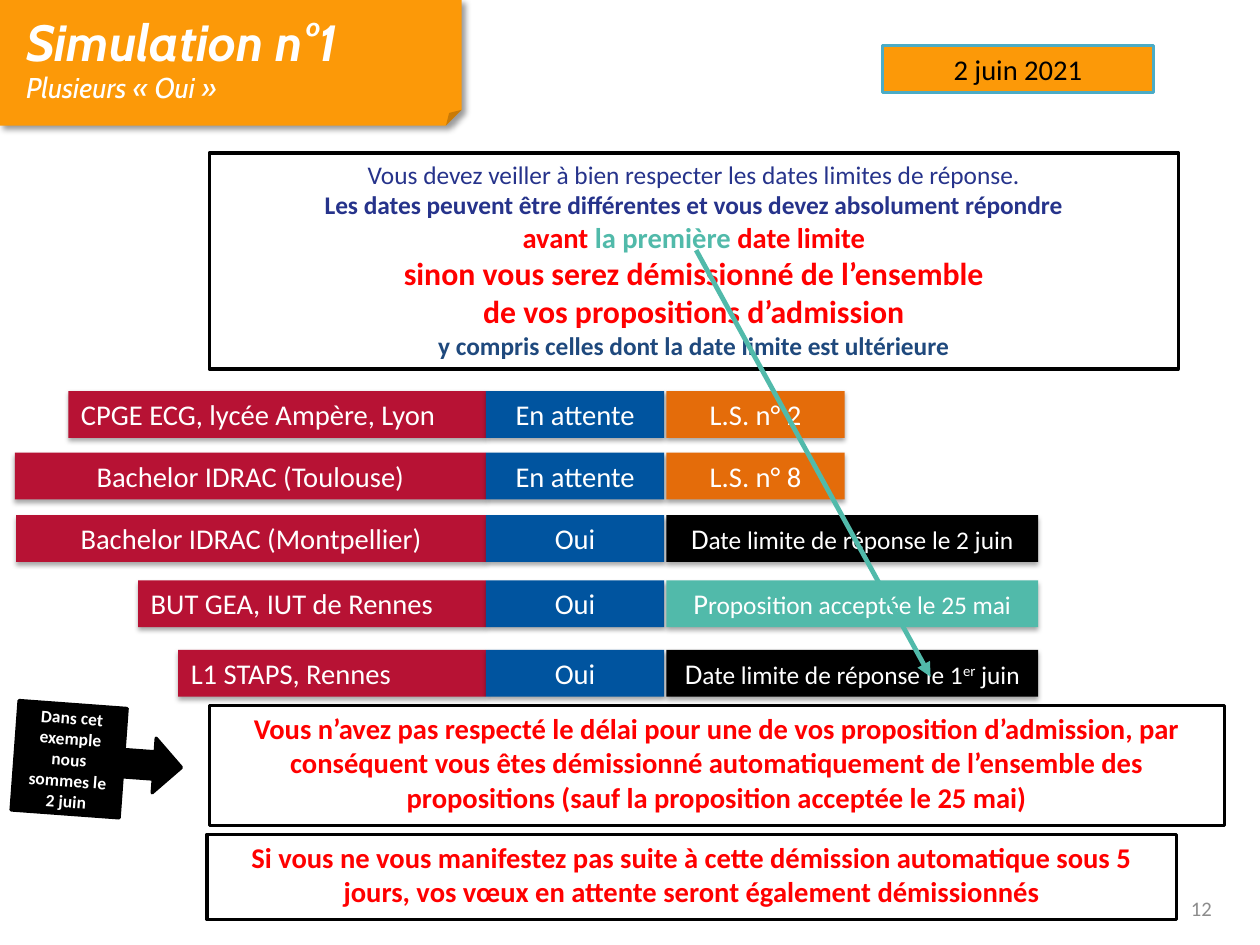
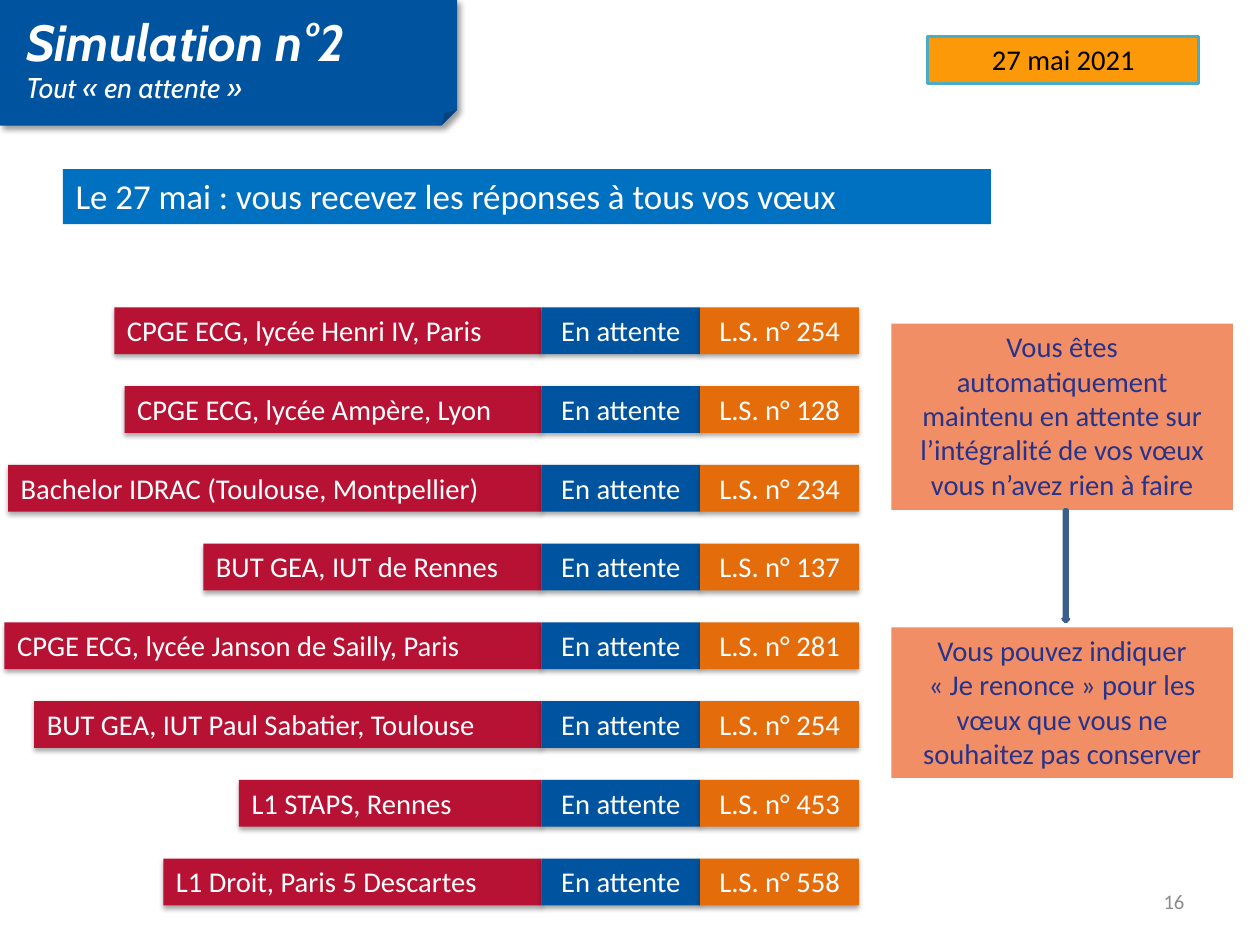
from dataclasses import dataclass

import lxml.etree
import pptx
import pptx.dml.color
import pptx.enum.shapes
import pptx.enum.text
import pptx.oxml.ns
import pptx.util

Cm = pptx.util.Cm
Pt = pptx.util.Pt
Shape = pptx.enum.shapes.MSO_SHAPE
Align = pptx.enum.text.PP_ALIGN
Anchor = pptx.enum.text.MSO_ANCHOR

# Shared colours and fonts
WHITE, BLACK, RED = "FFFFFF", "000000", "FF0000"
ORANGE, DARK_ORANGE, SALMON = "FC9908", "E46C0A", "F28E65"
BLUE, SKY_BLUE, INDIGO, NAVY = "00549F", "0070C0", "26338B", "1F497D"
CRIMSON, TEAL, GREY = "B71234", "51BAAA", "8C8C8C"
DATE_BORDER, ARROW_FILL, ARROW_BORDER = "4BACC6", "4F81BD", "3A5F8C"
BODY_FONT, TITLE_FONT = "Calibri", "Cabin"
ROW_HEIGHT = 1.04


@dataclass(frozen=True)
class Area:
    left: float
    top: float
    width: float
    height: float

    def lengths(self) -> tuple:
        return tuple(Cm(n) for n in (self.left, self.top, self.width, self.height))


@dataclass(frozen=True)
class Span:
    text: str
    size: float | None = None
    color: str | None = None
    superscript: bool = False


@dataclass(frozen=True)
class Line:
    spans: tuple[Span, ...]
    size: float = 18
    color: str = WHITE
    bold: bool = False
    italic: bool = False
    align: Align = Align.CENTER
    font: str = BODY_FONT
    spacing: float = 1.0


@dataclass(frozen=True)
class Shadow:
    opacity: int
    blur: float
    distance: float
    angle: int


@dataclass(frozen=True)
class Columns:
    status_left: float
    detail_left: float
    cell_width: float


@dataclass(frozen=True)
class Wish:
    left: float
    name: str
    status: str
    detail: Line
    detail_color: str = DARK_ORANGE
    detail_width: float | None = None
    align: Align = Align.LEFT


ROW_SHADOW = Shadow(35, 3.1, 1.8, 90)
BAND_SHADOW = Shadow(40, 4, 3, 45)


def line(text: str, **style) -> Line:
    return Line((Span(text),), **style)


def rgb(color: str) -> pptx.dml.color.RGBColor:
    return pptx.dml.color.RGBColor.from_string(color)


def add_xml(parent, tag: str, **attributes):
    element = lxml.etree.SubElement(parent, pptx.oxml.ns.qn(tag))
    for name, value in attributes.items():
        element.set(name, str(value))
    return element


def write_lines(frame, lines: tuple[Line, ...], anchor: Anchor,
                inset: tuple[float, float] = (0.28, 0.13)) -> None:
    frame.word_wrap = True
    frame.auto_size = pptx.enum.text.MSO_AUTO_SIZE.NONE
    frame.vertical_anchor = anchor
    frame.margin_left = frame.margin_right = Cm(inset[0])
    frame.margin_top = frame.margin_bottom = Cm(inset[1])
    for index, item in enumerate(lines):
        para = frame.add_paragraph() if index else frame.paragraphs[0]
        para.alignment = item.align
        para.line_spacing = item.spacing
        para.space_before = Pt(0)
        para.font.name = item.font
        para.font.size = Pt(item.size)
        para.font.bold = item.bold
        para.font.italic = item.italic
        para.font.color.rgb = rgb(item.color)
        for span in item.spans:
            run = para.add_run()
            run.text = span.text
            if span.size:
                run.font.size = Pt(span.size)
            if span.color:
                run.font.color.rgb = rgb(span.color)
            if span.superscript:
                run.font._element.set("baseline", "30000")


def add_box(page, area: Area, fill: str, lines: tuple[Line, ...] = (),
            border: str | None = None, shadow: Shadow | None = None,
            kind: Shape = Shape.RECTANGLE, anchor: Anchor = Anchor.TOP):
    box = page.shapes.add_shape(kind, *area.lengths())
    box.fill.solid()
    box.fill.fore_color.rgb = rgb(fill)
    if border:
        box.line.color.rgb = rgb(border)
        box.line.width = Pt(2)
    else:
        box.line.fill.background()
    box.shadow.inherit = False
    if shadow:
        effects = box._element.spPr.find(pptx.oxml.ns.qn("a:effectLst"))
        outer = add_xml(effects, "a:outerShdw", blurRad=int(Pt(shadow.blur)),
                        dist=int(Pt(shadow.distance)), dir=shadow.angle * 60000,
                        algn="tl", rotWithShape=0)
        color = add_xml(outer, "a:srgbClr", val=BLACK)
        add_xml(color, "a:alpha", val=shadow.opacity * 1000)
    if lines:
        write_lines(box.text_frame, lines, anchor)
    return box


def add_page(deck, title: str, subtitle: str, band_color: str, band_width: float,
             date: str, date_at: tuple[float, float],
             number: str, number_at: tuple[float, float]):
    """Title on a folded band, date box and page number."""
    page = deck.slides.add_slide(deck.slide_layouts[5])
    heading = page.shapes.title
    heading.left, heading.top, heading.width, heading.height = Area(0.58, 0.31, 9.5, 2.05).lengths()
    style = dict(font=TITLE_FONT, italic=True, align=Align.LEFT, spacing=0.95)
    write_lines(heading.text_frame,
                (line(title, size=32, bold=True, **style), line(subtitle, **style)),
                Anchor.MIDDLE, (0, 0))
    band = add_box(page, Area(0, 0, band_width, 2.79), band_color,
                   shadow=BAND_SHADOW, kind=Shape.FOLDED_CORNER)
    # The fold size has no entry in the adjustments of this shape
    fold = next(band._element.spPr.iter(pptx.oxml.ns.qn("a:avLst")))
    add_xml(fold, "a:gd", name="adj", fmla="val 12500")
    heading._element.addprevious(band._element)

    add_box(page, Area(*date_at, 6.02, ROW_HEIGHT), ORANGE,
            (line(date, color=BLACK),), border=DATE_BORDER)
    footer = page.shapes.add_textbox(*Area(*number_at, 6.53, 1.12).lengths())
    write_lines(footer.text_frame, (line(number, size=13, color=GREY, align=Align.RIGHT),),
                Anchor.MIDDLE)
    return page


def add_wish(page, top: float, wish: Wish, columns: Columns) -> None:
    """One row: wish, status and detail side by side."""
    cells = (
        (wish.left, columns.status_left - wish.left, CRIMSON, line(wish.name, align=wish.align)),
        (columns.status_left, columns.cell_width, BLUE, line(wish.status)),
        (columns.detail_left, wish.detail_width or columns.cell_width,
         wish.detail_color, wish.detail),
    )
    for left, width, fill, text in cells:
        add_box(page, Area(left, top, width, ROW_HEIGHT), fill, (text,), shadow=ROW_SHADOW)


def add_arrow(page, start: tuple[float, float], end: tuple[float, float]) -> None:
    arrow = page.shapes.add_connector(pptx.enum.shapes.MSO_CONNECTOR.STRAIGHT,
                                      *(Cm(n) for n in start + end))
    arrow.line.color.rgb = rgb(TEAL)
    arrow.line.width = Pt(3)
    add_xml(arrow.line._get_or_add_ln(), "a:tailEnd", type="triangle")
    add_xml(arrow._element.spPr, "a:effectLst")


def build_several_yes(deck) -> None:
    page = add_page(deck, "Simulation n°1", "Plusieurs « Oui »", ORANGE, 10.26,
                    "2 juin 2021", (19.61, 1.02), "12", (20.68, 19.63))

    # Wishes
    columns = Columns(10.8, 14.81, 3.96)

    def deadline(initial: str, *rest: Span) -> Line:
        return Line((Span(initial, size=18), *rest), size=16)

    wide = 8.26
    wishes = {
        8.69: Wish(1.52, "CPGE ECG, lycée Ampère, Lyon", "En attente", line("L.S. n° 2")),
        10.06: Wish(0.33, "Bachelor IDRAC (Toulouse)", "En attente", line("L.S. n° 8"),
                    align=Align.CENTER),
        11.45: Wish(0.36, "Bachelor IDRAC (Montpellier)", "Oui",
                    deadline("D", Span("ate limite de réponse le 2 juin")),
                    BLACK, wide, Align.CENTER),
        12.9: Wish(3.07, "BUT GEA, IUT de Rennes", "Oui",
                   deadline("P", Span("roposition acceptée le 25 mai")), TEAL, wide),
        14.44: Wish(3.96, "L1 STAPS, Rennes", "Oui",
                    deadline("D", Span("ate limite de réponse le 1"),
                             Span("er", superscript=True), Span(" juin")), BLACK, wide),
    }
    for top, wish in wishes.items():
        add_wish(page, top, wish, columns)

    # Reminder about deadlines
    add_box(page, Area(4.65, 3.4, 21.54, 4.8), WHITE, (
        line("Vous devez veiller à bien respecter les dates limites de réponse.",
             size=16, color=INDIGO),
        line("Les dates peuvent être différentes et vous devez absolument répondre",
             size=16, color=INDIGO, bold=True),
        Line((Span("avant "), Span("la première ", color=TEAL), Span("date limite")),
             color=RED, bold=True),
        line("sinon vous serez démissionné de l’ensemble", size=20, color=RED, bold=True),
        line("de vos propositions d’admission", size=20, color=RED, bold=True),
        line("y compris celles dont la date limite est ultérieure",
             size=16, color=NAVY, bold=True),
    ), border=BLACK)
    add_arrow(page, (15.47, 5.56), (20.68, 15.04))

    # Consequences
    callout = add_box(page, Area(0.33, 15.7, 3.71, 2.44), BLACK,
                      (line("Dans cet exemple nous sommes le 2 juin", size=11, bold=True),),
                      border=BLACK, kind=Shape.RIGHT_ARROW_CALLOUT, anchor=Anchor.MIDDLE)
    callout.rotation = 4.2
    consequences = (
        (Area(4.65, 15.67, 22.56, 2.67),
         "Vous n’avez pas respecté le délai pour une de vos proposition d’admission, par "
         "conséquent vous êtes démissionné automatiquement de l’ensemble des propositions "
         "(sauf la proposition acceptée le 25 mai)"),
        (Area(4.6, 18.54, 21.54, 1.9),
         "Si vous ne vous manifestez pas suite à cette démission automatique sous 5 jours, "
         "vos vœux en attente seront également démissionnés"),
    )
    for area, text in consequences:
        add_box(page, area, WHITE, (line(text, color=RED, bold=True),), border=BLACK)


def build_all_waiting(deck) -> None:
    page = add_page(deck, "Simulation n°2", "Tout « en attente »", BLUE, 10.16,
                    "27 mai 2021", (20.62, 0.81), "16", (20.07, 19.46))
    add_box(page, Area(1.4, 3.76, 20.62, 1.22), SKY_BLUE,
            (line("Le 27 mai : vous recevez les réponses à tous vos vœux",
                  size=22, align=Align.LEFT),))

    # Wishes, evenly spaced
    columns = Columns(12.03, 15.56, 3.53)
    first_top, pitch = 6.83, 1.75
    wishes = (
        (2.54, "CPGE ECG, lycée Henri IV, Paris", 254),
        (2.77, "CPGE ECG, lycée Ampère, Lyon", 128),
        (0.18, "Bachelor IDRAC (Toulouse, Montpellier)", 234),
        (4.52, "BUT GEA, IUT de Rennes", 137),
        (0.1, "CPGE ECG, lycée Janson de Sailly, Paris", 281),
        (0.76, "BUT GEA, IUT Paul Sabatier, Toulouse", 254),
        (5.31, "L1 STAPS, Rennes", 453),
        (3.63, "L1 Droit, Paris 5 Descartes", 558),
    )
    for index, (left, name, rank) in enumerate(wishes):
        add_wish(page, first_top + index * pitch,
                 Wish(left, name, "En attente", line(f"L.S. n° {rank}")), columns)

    # What happens next
    add_box(page, Area(19.81, 7.19, 7.59, 4.14), SALMON,
            (line("Vous êtes automatiquement maintenu en attente sur l’intégralité "
                  "de vos vœux vous n’avez rien à faire", color=INDIGO),))
    add_box(page, Area(19.81, 13.94, 7.59, 3.35), SALMON,
            (line("Vous pouvez indiquer", color=INDIGO),
             line("« Je renonce » pour les vœux que vous ne souhaitez pas conserver",
                  color=INDIGO)))
    add_box(page, Area(23.62, 11.33, 0.13, 2.49), ARROW_FILL,
            border=ARROW_BORDER, kind=Shape.DOWN_ARROW)


def main() -> None:
    deck = pptx.Presentation()
    deck.slide_width, deck.slide_height = Cm(28), Cm(21)
    build_several_yes(deck)
    build_all_waiting(deck)
    deck.save("out.pptx")


if __name__ == "__main__":
    main()
